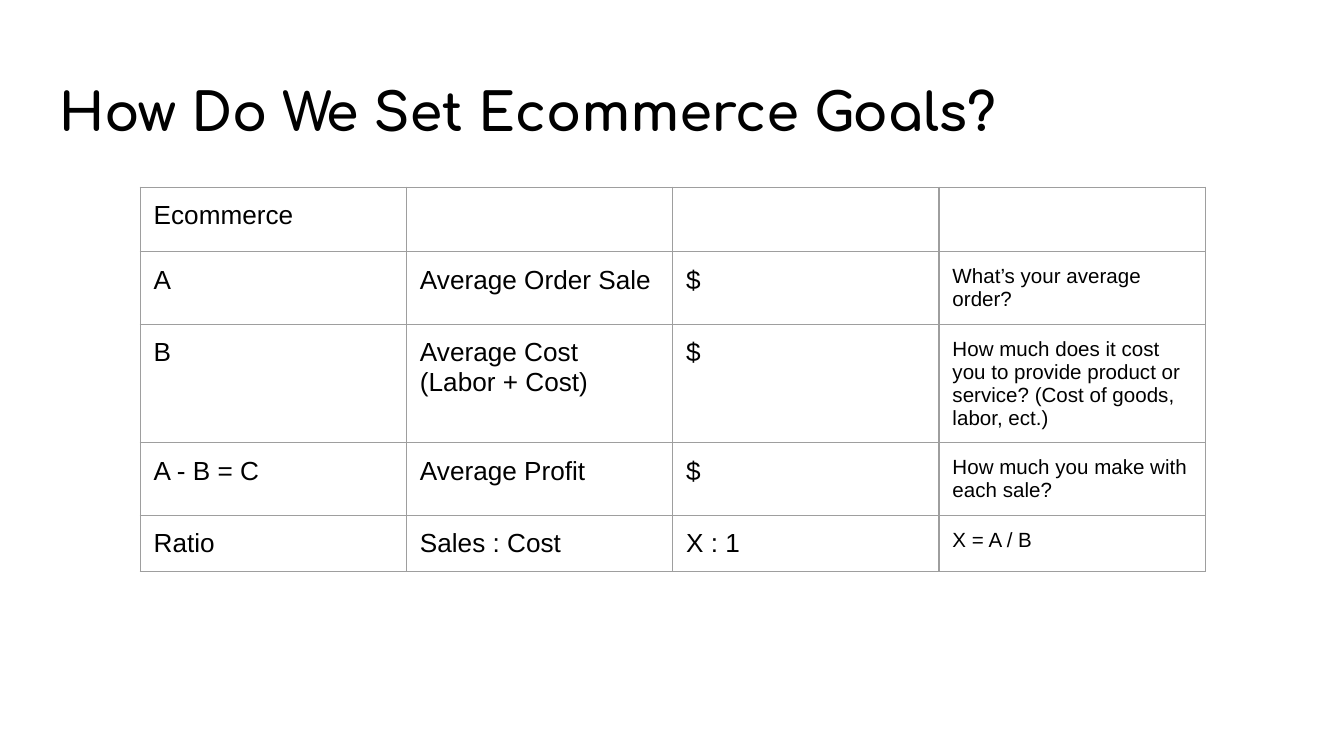
from lxml.etree import SubElement
from pptx import Presentation
from pptx.dml.color import RGBColor
from pptx.enum.text import MSO_ANCHOR, MSO_AUTO_SIZE, PP_ALIGN
from pptx.oxml.ns import qn
from pptx.util import Emu, Pt

EMU_PER_PX = 5715  # 160 px to the inch
INSET = 16
BLACK = RGBColor(0x00, 0x00, 0x00)
WHITE = RGBColor(0xFF, 0xFF, 0xFF)
GREY = RGBColor(0x9E, 0x9E, 0x9E)
TITLE_FONT = "Comfortaa"
TABLE_FONT = "Arial"

TITLE = "How Do We Set Ecommerce Goals?"
GOALS = [
    ["Ecommerce", "", "", ""],
    ["A", "Average Order Sale", "$", "What’s your average order?"],
    ["B", "Average Cost (Labor + Cost)", "$",
     "How much does it cost you to provide product or service? "
     "(Cost of goods, labor, ect.)"],
    ["A - B = C", "Average Profit", "$", "How much you make with each sale?"],
    ["Ratio", "Sales : Cost", "X : 1", "X = A / B"],
]
COLUMN_SIZES = [14, 14, 14, 11]


def px(value):
    return Emu(value * EMU_PER_PX)


def set_margins(target):
    """Give a text frame or a table cell the same inset on every side."""
    target.margin_left = target.margin_right = px(INSET)
    target.margin_top = target.margin_bottom = px(INSET)


def format_font(font, name, size, bold=False):
    font.name = name
    font.size = Pt(size)
    font.bold = bold
    font.color.rgb = BLACK


def add_borders(cell):
    properties = cell._tc.get_or_add_tcPr()
    for index, side in enumerate(("a:lnL", "a:lnR", "a:lnT", "a:lnB")):
        line = SubElement(properties, qn(side), w=str(Pt(0.75)))
        fill = SubElement(line, qn("a:solidFill"))
        SubElement(fill, qn("a:srgbClr"), val=str(GREY))
        properties.insert(index, line)  # borders come before the cell fill


def fill_cell(cell, text, size):
    set_margins(cell)
    cell.fill.background()
    add_borders(cell)
    para = cell.text_frame.paragraphs[0]
    if text:
        para.text = text
        format_font(para.runs[0].font, TABLE_FONT, size)
    else:  # the font of an empty cell sets the height of its row
        end = SubElement(para._p, qn("a:endParaRPr"), sz="1800")
        SubElement(end, qn("a:latin"), typeface=TABLE_FONT)


def place_title(page, left, top, width, height):
    title = page.shapes.title
    title.left, title.top = px(left), px(top)
    title.width, title.height = px(width), px(height)
    frame = title.text_frame
    frame.text = TITLE
    frame.word_wrap = True
    frame.auto_size = MSO_AUTO_SIZE.NONE
    frame.vertical_anchor = MSO_ANCHOR.TOP
    set_margins(frame)
    para = frame.paragraphs[0]
    para.alignment = PP_ALIGN.LEFT
    format_font(para.runs[0].font, TITLE_FONT, 28, bold=True)


def place_goal_table(page, left, top, column_width, row_height):
    rows, columns = len(GOALS), len(COLUMN_SIZES)
    table = page.shapes.add_table(
        rows, columns, px(left), px(top),
        px(column_width * columns), px(row_height * rows)).table
    table.first_row = table.horz_banding = False
    for column in table.columns:
        column.width = px(column_width)
    for row, texts in zip(table.rows, GOALS):
        row.height = px(row_height)
        for cell, text, size in zip(row.cells, texts, COLUMN_SIZES):
            fill_cell(cell, text, size)


def main():
    deck = Presentation()
    deck.slide_width, deck.slide_height = px(1600), px(900)
    page = deck.slides.add_slide(deck.slide_layouts[5])
    page.background.fill.solid()
    page.background.fill.fore_color.rgb = WHITE
    place_title(page, 54, 78, 1491, 101)
    place_goal_table(page, 167, 223, 317, 67)
    deck.save("out.pptx")


if __name__ == "__main__":
    main()
